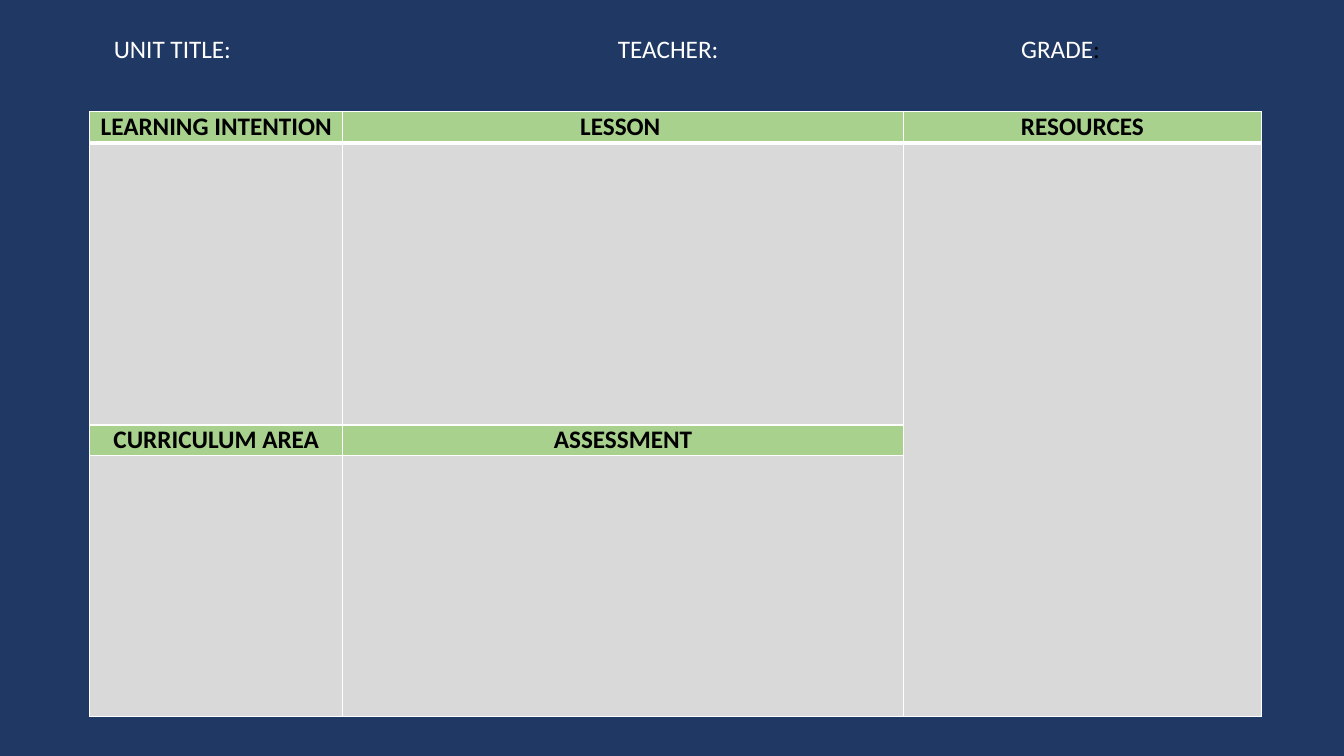
from lxml.etree import SubElement
from pptx import Presentation
from pptx.dml.color import RGBColor
from pptx.enum.text import MSO_ANCHOR, MSO_AUTO_SIZE, PP_ALIGN
from pptx.oxml.ns import qn
from pptx.util import Inches, Pt

NAVY, GREEN, GREY = "203864", "A9D18E", "D9D9D9"
WHITE, BLACK = "FFFFFF", "000000"
COLUMN_WIDTHS = [2.51, 5.56, 3.55]
ROW_HEIGHTS = [0.3, 2.8, 0.3, 2.59]
HEADINGS = {
    (0, 0): "LEARNING INTENTION",
    (0, 1): "LESSON ",
    (0, 2): "RESOURCES",
    (2, 0): "CURRICULUM AREA",
    (2, 1): "ASSESSMENT",
}


def color(value):
    return RGBColor.from_string(value)


def set_font(font, value, bold=False):
    font.name, font.size, font.bold = "Calibri", Pt(18), bold
    font.color.rgb = color(value)


def add_tab_stops(para, positions):
    tab_list = SubElement(para._p.get_or_add_pPr(), qn("a:tabLst"))
    for position in positions:
        SubElement(tab_list, qn("a:tab"), pos=str(Inches(position)), algn="l")


def set_borders(cell, widths):
    properties = cell._tc.get_or_add_tcPr()
    for side, width in zip("LRTB", widths):
        line = SubElement(properties, qn(f"a:ln{side}"), w=str(Pt(width)))
        line_fill = SubElement(line, qn("a:solidFill"))
        SubElement(line_fill, qn("a:srgbClr"), val=WHITE)


def add_unit_details(page, left, top, width, height):
    box = page.shapes.add_textbox(Inches(left), Inches(top), Inches(width), Inches(height))
    frame = box.text_frame
    frame.word_wrap = True
    frame.auto_size = MSO_AUTO_SIZE.SHAPE_TO_FIT_TEXT
    para = frame.paragraphs[0]
    para.alignment = PP_ALIGN.JUSTIFY
    add_tab_stops(para, [5, 9])
    for text, value in [("UNIT TITLE:\tTEACHER:\tGRADE", WHITE), (":", BLACK)]:
        span = para.add_run()
        span.text = text
        set_font(span.font, value)


def add_plan_table(page, left, top):
    frame = page.shapes.add_table(
        len(ROW_HEIGHTS), len(COLUMN_WIDTHS), Inches(left), Inches(top),
        Inches(sum(COLUMN_WIDTHS)), Inches(sum(ROW_HEIGHTS)))
    table = frame.table
    table.horz_banding = False
    for column, width in zip(table.columns, COLUMN_WIDTHS):
        column.width = Inches(width)
    for row, height in zip(table.rows, ROW_HEIGHTS):
        row.height = Inches(height)

    for row in range(len(ROW_HEIGHTS)):
        for column in range(len(COLUMN_WIDTHS)):
            cell = table.cell(row, column)
            heading = HEADINGS.get((row, column))
            # A thick rule runs under the top row
            set_borders(cell, [1, 1, 3 if row == 1 else 1, 3 if row == 0 else 1])
            cell.fill.solid()
            cell.fill.fore_color.rgb = color(GREEN if heading else GREY)
            cell.margin_left = cell.margin_right = Inches(0.07)
            cell.margin_top = cell.margin_bottom = 0
            para = cell.text_frame.paragraphs[0]
            set_font(para.font, BLACK, bold=bool(heading))
            if heading:
                para.text = heading
                para.alignment = PP_ALIGN.CENTER
    table.cell(0, 0).vertical_anchor = MSO_ANCHOR.MIDDLE

    # Resources fill the full height of the last column
    table.cell(1, 2).merge(table.cell(3, 2))


def main():
    deck = Presentation()
    deck.slide_width, deck.slide_height = Inches(13.33), Inches(7.5)
    page = deck.slides.add_slide(deck.slide_layouts[6])
    page.background.fill.solid()
    page.background.fill.fore_color.rgb = color(NAVY)
    add_plan_table(page, 0.89, 1.11)
    add_unit_details(page, 1.03, 0.28, 11.48, 0.4)
    deck.save("out.pptx")


if __name__ == "__main__":
    main()
